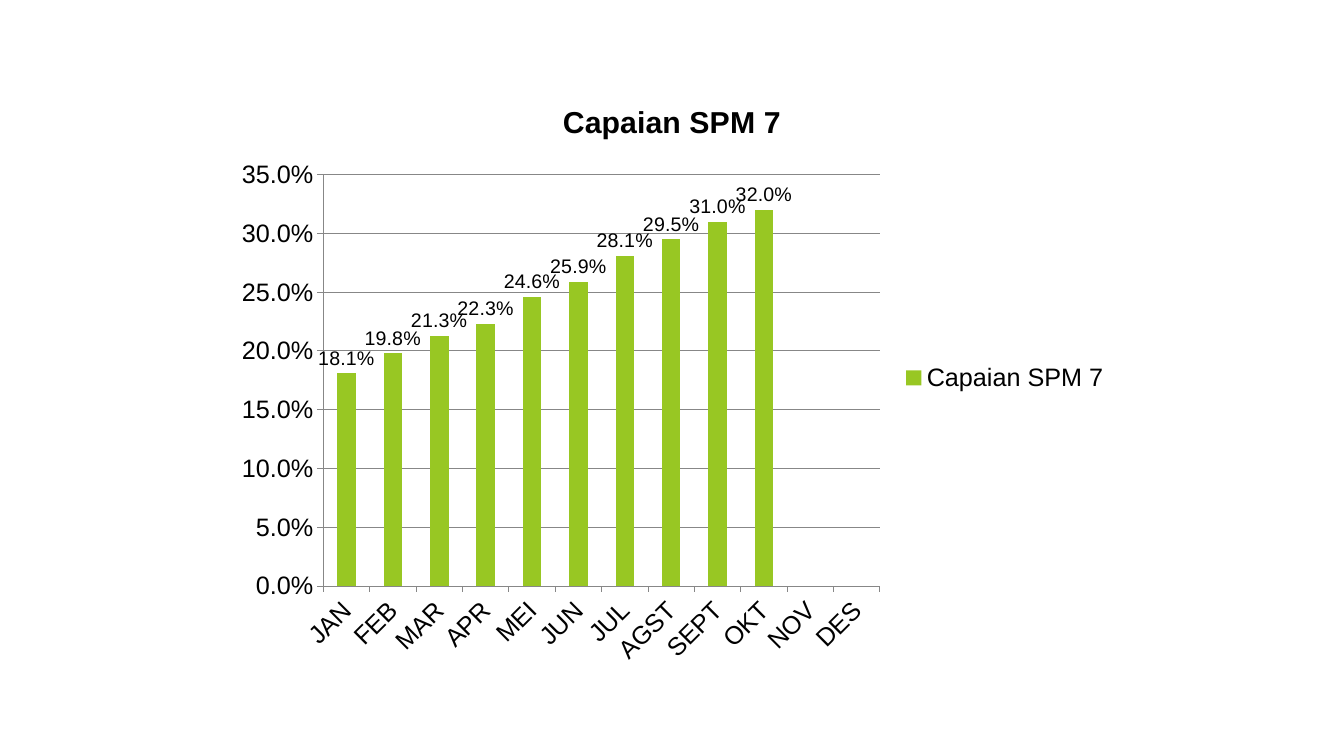
import pptx
import pptx.chart.data
import pptx.dml.color
import pptx.enum.chart
import pptx.util

Cm = pptx.util.Cm
Pt = pptx.util.Pt

TITLE = "Capaian SPM 7"
FONT = "Arial"
PERCENT = "0.0%"
BLACK, GREEN, GRAY = "000000", "98C723", "878787"
ACHIEVEMENTS = [
    ("JAN", 0.181), ("FEB", 0.198), ("MAR", 0.213), ("APR", 0.223),
    ("MEI", 0.246), ("JUN", 0.259), ("JUL", 0.281), ("AGST", 0.295),
    ("SEPT", 0.31), ("OKT", 0.32), ("NOV", None), ("DES", None),
]
SLIDE_WIDTH, SLIDE_HEIGHT = Cm(33.87), Cm(19.05)
CHART_WIDTH, CHART_HEIGHT = Cm(22.58), Cm(15.05)


def color(hex_value):
    return pptx.dml.color.RGBColor.from_string(hex_value)


def format_font(font, size, bold=False):
    font.name = FONT
    font.size = Pt(size)
    font.bold = bold
    font.color.rgb = color(BLACK)


def write_text(text_frame, text, **font_format):
    run = text_frame.paragraphs[0].add_run()
    run.text = text
    format_font(run.font, **font_format)


def format_line(line):
    line.color.rgb = color(GRAY)
    line.width = Pt(0.75)


def add_achievement_chart(slide):
    data = pptx.chart.data.CategoryChartData(number_format=PERCENT)
    months, values = zip(*ACHIEVEMENTS)
    data.categories = months
    data.add_series(TITLE, values)
    chart = slide.shapes.add_chart(
        pptx.enum.chart.XL_CHART_TYPE.COLUMN_CLUSTERED,
        (SLIDE_WIDTH - CHART_WIDTH) // 2, Cm(2),
        CHART_WIDTH, CHART_HEIGHT, data).chart
    format_font(chart.font, size=18)
    write_text(chart.chart_title.text_frame, TITLE, size=21.6, bold=True)
    chart.chart_title.include_in_layout = False

    chart.has_legend = True
    chart.legend.position = pptx.enum.chart.XL_LEGEND_POSITION.RIGHT
    chart.legend.include_in_layout = False

    for axis in (chart.category_axis, chart.value_axis):
        axis.major_tick_mark = pptx.enum.chart.XL_TICK_MARK.OUTSIDE
        axis.minor_tick_mark = pptx.enum.chart.XL_TICK_MARK.NONE
        format_line(axis.format.line)
    value_axis = chart.value_axis
    value_axis.minimum_scale = 0
    value_axis.maximum_scale = 0.35
    value_axis.major_unit = 0.05
    value_axis.has_major_gridlines = True
    format_line(value_axis.major_gridlines.format.line)
    value_axis.tick_labels.number_format = PERCENT
    value_axis.tick_labels.number_format_is_linked = False

    plot = chart.plots[0]
    plot.gap_width = 150
    plot.vary_by_categories = False
    series = plot.series[0]
    series.format.fill.solid()
    series.format.fill.fore_color.rgb = color(GREEN)
    labels = series.data_labels
    labels.show_value = True
    labels.number_format = PERCENT
    labels.number_format_is_linked = False
    labels.position = pptx.enum.chart.XL_LABEL_POSITION.OUTSIDE_END
    format_font(labels.font, size=14)


def main():
    presentation = pptx.Presentation()
    presentation.slide_width = SLIDE_WIDTH
    presentation.slide_height = SLIDE_HEIGHT
    blank_layout = presentation.slide_layouts[6]
    add_achievement_chart(presentation.slides.add_slide(blank_layout))
    presentation.save("out.pptx")


if __name__ == "__main__":
    main()
